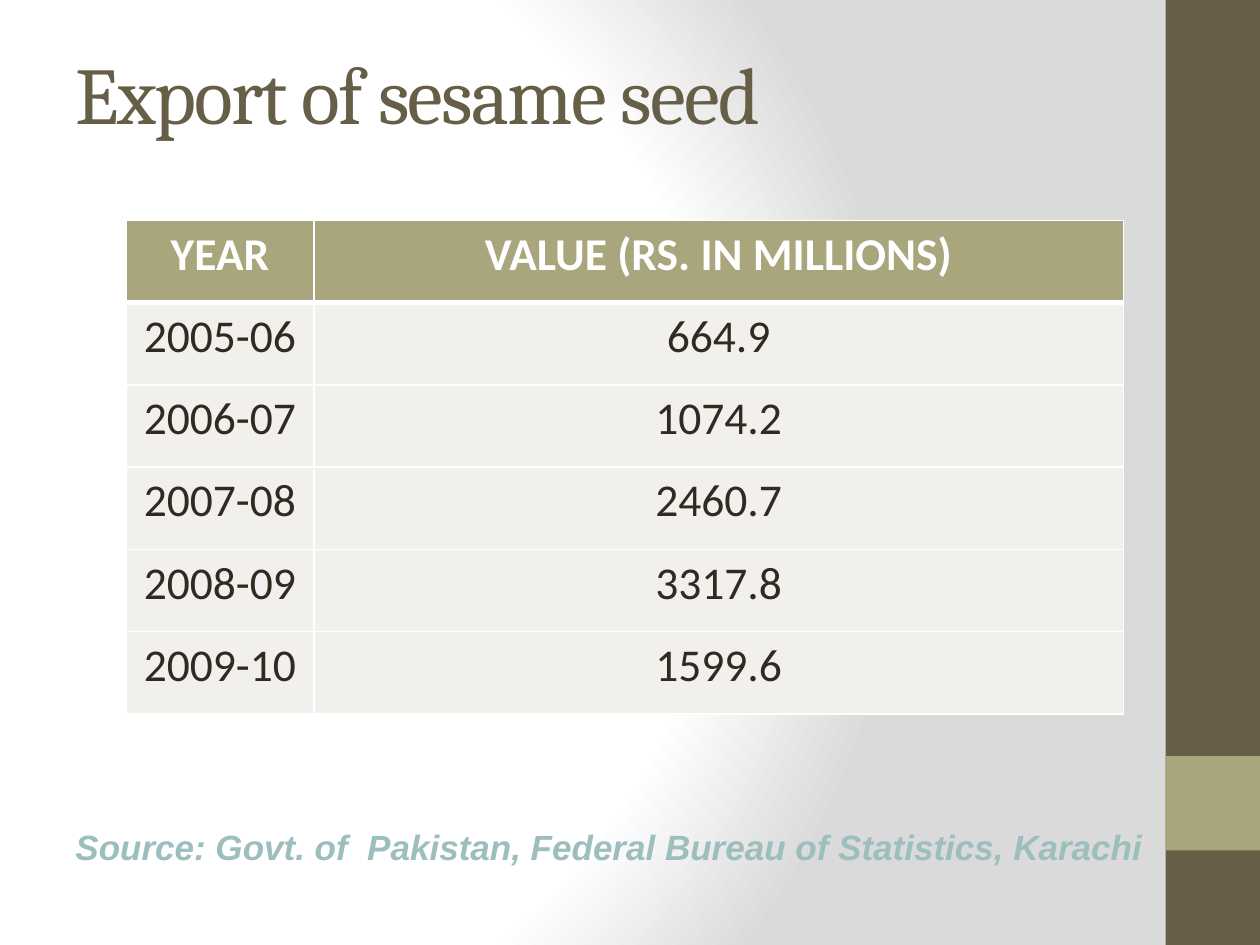
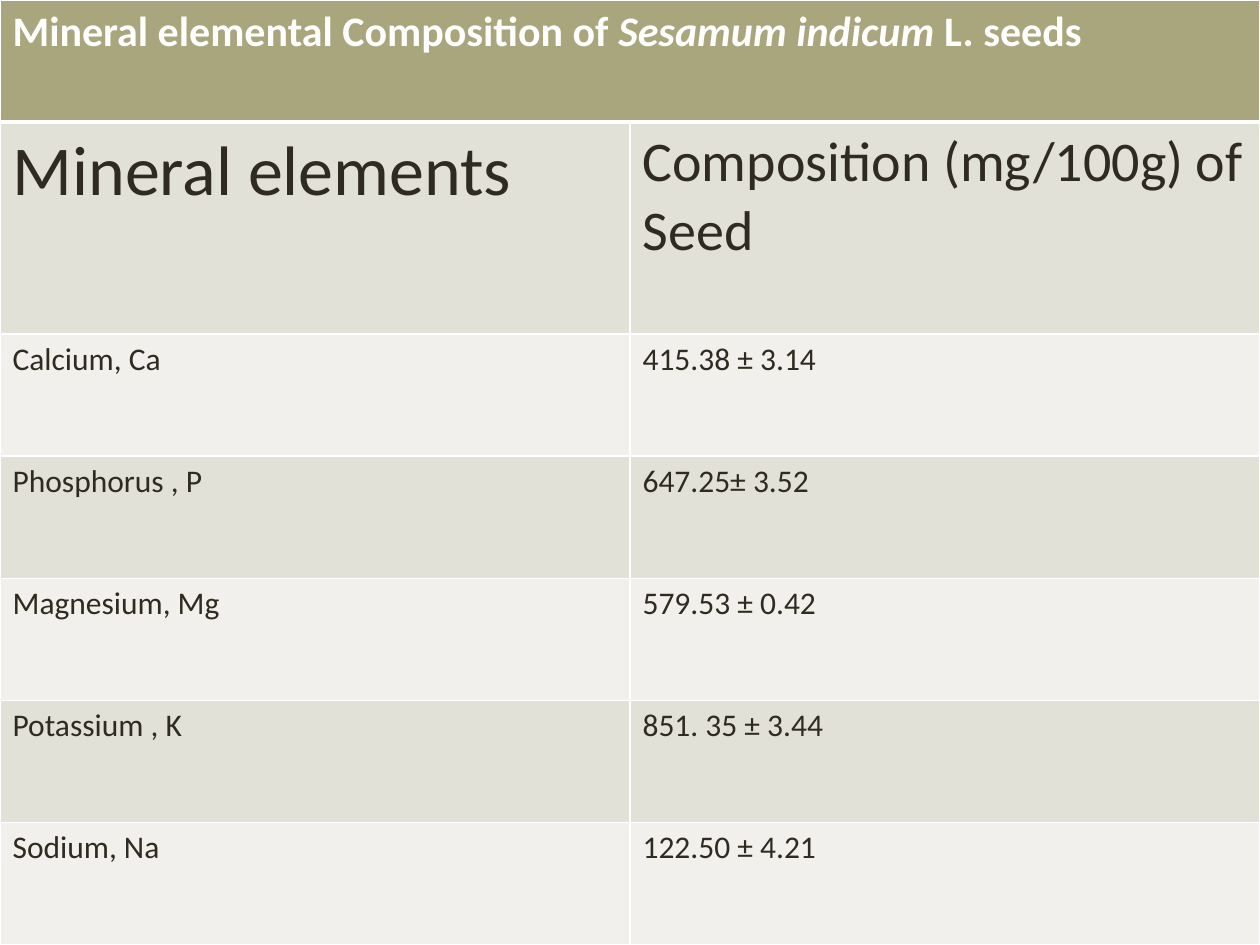
from lxml.etree import SubElement
from pptx import Presentation
from pptx.dml.color import RGBColor
from pptx.enum.shapes import MSO_SHAPE
from pptx.enum.text import MSO_ANCHOR, MSO_AUTO_SIZE, PP_ALIGN
from pptx.oxml import parse_xml
from pptx.oxml.ns import nsdecls, qn
from pptx.util import Pt

WIDTH, HEIGHT = 720, 540
BROWN, OLIVE, TEAL = "675E47", "A9A57C", "9CBEBD"
INK, WHITE = "2F2B20", "FFFFFF"
LIGHT, BAND = "F1F0EC", "E2E1D7"
BACKGROUND = [(0, WHITE), (75, WHITE), (100, "DADADA")]

EXPORTS = [
    ("YEAR", "VALUE (RS. IN MILLIONS)"),
    ("2005-06", "664.9"),
    ("2006-07", "1074.2"),
    ("2007-08", "2460.7"),
    ("2008-09", "3317.8"),
    ("2009-10", "1599.6"),
]
MINERALS = [
    ("Calcium, Ca", "415.38 ± 3.14"),
    ("Phosphorus , P", "647.25± 3.52"),
    ("Magnesium, Mg", "579.53 ± 0.42"),
    ("Potassium , K", "851. 35 ± 3.44"),
    ("Sodium, Na", "122.50 ± 4.21"),
]


def rgb(value):
    return RGBColor.from_string(value)


def add_text(p, text, size=18, font="Calibri", color=INK, bold=False,
             italic=False, align=PP_ALIGN.LEFT, spacing=None):
    p.alignment = align
    r = p.add_run()
    r.text = text
    r.font.size = Pt(size)
    r.font.name = font
    r.font.color.rgb = rgb(color)
    r.font.bold = bold
    r.font.italic = italic
    if spacing is not None:
        r.font._element.set("spc", str(spacing * 100))


def set_background(master):
    master.background.fill.solid()
    bg = master.element.find(".//" + qn("p:bgPr"))
    stops = "".join(
        f'<a:gs pos="{pos * 1000}"><a:srgbClr val="{color}"/></a:gs>'
        for pos, color in BACKGROUND)
    bg.replace(bg[0], parse_xml(
        f'<a:gradFill {nsdecls("a")} rotWithShape="1"><a:gsLst>{stops}</a:gsLst>'
        '<a:path path="circle"><a:fillToRect l="20000" t="50000" r="100000" '
        'b="50000"/></a:path></a:gradFill>'))


def add_band(s, top, height, color):
    sp = s.shapes.add_shape(MSO_SHAPE.RECTANGLE, Pt(666), Pt(top), Pt(54), Pt(height))
    sp.shadow.inherit = False
    sp.fill.solid()
    sp.fill.fore_color.rgb = rgb(color)
    sp.line.fill.background()


def add_slide(prs, layout):
    s = prs.slides.add_slide(prs.slide_layouts[layout])
    add_band(s, 0, HEIGHT, BROWN)
    add_band(s, 432, 54, OLIVE)
    return s


def add_title(s, text):
    sp = s.shapes.title
    sp.left, sp.top, sp.width, sp.height = Pt(36), Pt(21.6), Pt(600), Pt(90)
    tf = sp.text_frame
    tf.word_wrap = True
    tf.vertical_anchor = MSO_ANCHOR.TOP
    add_text(tf.paragraphs[0], text, size=46, font="Cambria", color=BROWN, spacing=-1)


def add_source(s, text):
    sp = s.shapes.add_textbox(Pt(36), Pt(468), Pt(636), Pt(31))
    tf = sp.text_frame
    tf.word_wrap = True
    tf.auto_size = MSO_AUTO_SIZE.SHAPE_TO_FIT_TEXT
    add_text(tf.paragraphs[0], text, size=20, font="Arial", color=TEAL,
             bold=True, italic=True)


def add_border(cell, side, width):
    tc_pr = cell._tc.get_or_add_tcPr()
    ln = SubElement(tc_pr, qn(f"a:ln{side}"), w=str(Pt(width)))
    fill = SubElement(ln, qn("a:solidFill"))
    SubElement(fill, qn("a:srgbClr"), val=WHITE)


def add_grid(s, left, top, col_widths, row_heights, body_fills):
    tbl = s.shapes.add_table(
        len(row_heights), len(col_widths), Pt(left), Pt(top),
        Pt(sum(col_widths)), Pt(sum(row_heights))).table
    for col, width in zip(tbl.columns, col_widths):
        col.width = Pt(width)
    for i, (row, height) in enumerate(zip(tbl.rows, row_heights)):
        row.height = Pt(height)
        fill = body_fills[(i - 1) % len(body_fills)] if i else OLIVE
        for cell in row.cells:
            for side in "LRTB":
                header_rule = (i, side) in ((0, "B"), (1, "T"))
                add_border(cell, side, 3 if header_rule else 1)
            cell.fill.solid()
            cell.fill.fore_color.rgb = rgb(fill)
    return tbl


def fill_row(tbl, i, texts, **fmt):
    for j, text in enumerate(texts):
        add_text(tbl.cell(i, j).text_frame.paragraphs[0], text, **fmt)


def add_exports_slide(prs):
    s = add_slide(prs, 5)
    add_title(s, "Export of sesame seed")
    tbl = add_grid(s, 72, 126, [107.5, 462.5], [47] * len(EXPORTS), [LIGHT])
    for i, texts in enumerate(EXPORTS):
        fill_row(tbl, i, texts, size=26, align=PP_ALIGN.CENTER,
                 color=INK if i else WHITE, bold=i == 0)
    add_source(s, "Source: Govt. of  Pakistan, Federal Bureau of Statistics, Karachi")


def add_minerals_slide(prs):
    s = add_slide(prs, 6)
    heading_height = 121
    row_height = (HEIGHT - heading_height) / (len(MINERALS) + 1)
    heights = [row_height, heading_height] + [row_height] * len(MINERALS)
    tbl = add_grid(s, 0, 0, [WIDTH / 2] * 2, heights, [BAND, LIGHT])
    tbl.cell(0, 0).merge(tbl.cell(0, 1))
    p = tbl.cell(0, 0).text_frame.paragraphs[0]
    for text, italic in (("Mineral elemental Composition of ", False),
                         ("Sesamum indicum ", True), ("L. seeds", False)):
        add_text(p, text, size=24, color=WHITE, bold=True, italic=italic)
    headings = (("Mineral elements", 40), ("Composition (mg/100g) of Seed", 32))
    for j, (text, size) in enumerate(headings):
        add_text(tbl.cell(1, j).text_frame.paragraphs[0], text, size=size)
    for i, texts in enumerate(MINERALS, 2):
        fill_row(tbl, i, texts)


def main():
    prs = Presentation()
    prs.slide_width, prs.slide_height = Pt(WIDTH), Pt(HEIGHT)
    set_background(prs.slide_master)
    add_exports_slide(prs)
    add_minerals_slide(prs)
    prs.save("out.pptx")


if __name__ == "__main__":
    main()
